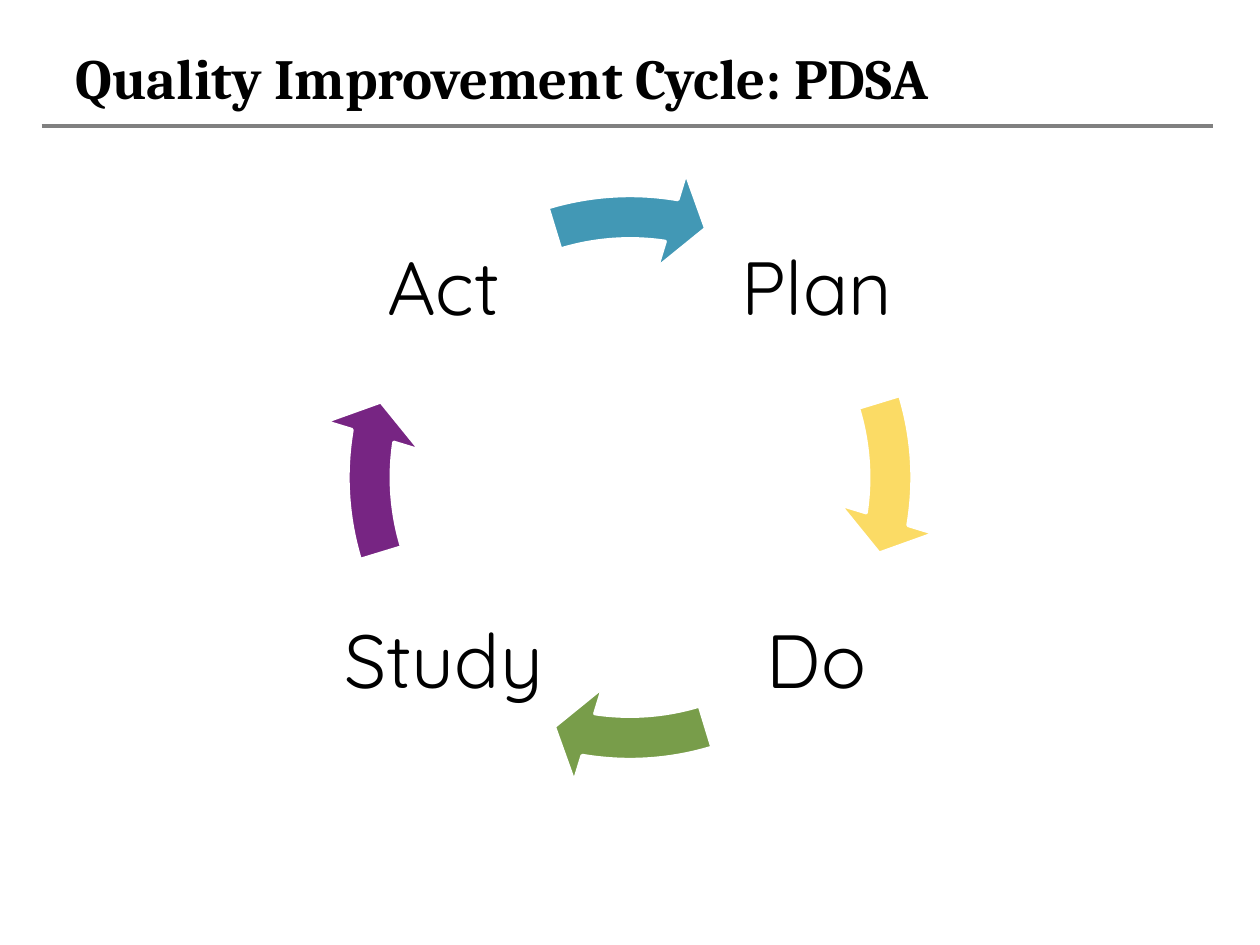
"""Build the PDSA quality improvement cycle slide."""
from typing import NamedTuple

from lxml import etree
from pptx import Presentation
from pptx.dml.color import RGBColor
from pptx.enum.shapes import MSO_CONNECTOR, MSO_SHAPE
from pptx.enum.text import MSO_ANCHOR, PP_ALIGN
from pptx.oxml.ns import qn
from pptx.slide import Slide
from pptx.util import Inches, Pt

ARROW = MSO_SHAPE.CIRCULAR_ARROW
STRAIGHT = MSO_CONNECTOR.STRAIGHT
MIDDLE = MSO_ANCHOR.MIDDLE
LEFT, CENTER = PP_ALIGN.LEFT, PP_ALIGN.CENTER

BLACK = RGBColor(0x00, 0x00, 0x00)
WHITE = RGBColor(0xFF, 0xFF, 0xFF)
GRAY = RGBColor(0x80, 0x80, 0x80)
YELLOW = RGBColor(0xFB, 0xDB, 0x65)
GREEN = RGBColor(0x78, 0x9D, 0x4A)
PURPLE = RGBColor(0x77, 0x25, 0x83)
BLUE = RGBColor(0x42, 0x98, 0xB5)

WEST, EAST, NORTH, SOUTH = 2.65, 5.61, 1.44, 4.4
LABEL, RING = 1.74, 4.92
FULL, QUARTER = 216, 54
TIP, TAIL = 5.5, 205.85


class Step(NamedTuple):
    name: str
    left: float
    top: float
    color: RGBColor


STEPS = [
    Step("Plan", EAST, NORTH, YELLOW),
    Step("Do", EAST, SOUTH, GREEN),
    Step("Study", WEST, SOUTH, PURPLE),
    Step("Act", WEST, NORTH, BLUE),
]


def add_rule(slide: Slide) -> None:
    rule = slide.shapes.add_connector(
        STRAIGHT, Inches(0.33), Inches(1), Inches(9.63), Inches(1))
    rule.line.color.rgb = GRAY
    rule.line.width = Pt(2.25)
    etree.SubElement(rule._element.spPr, qn("a:effectLst"))


def set_title(slide: Slide, text: str) -> None:
    title = slide.shapes.title
    title.left, title.top = Inches(0.5), Inches(0.3)
    title.width, title.height = Inches(9), Inches(0.62)
    frame = title.text_frame
    frame.text = text
    frame.vertical_anchor = MIDDLE
    para = frame.paragraphs[0]
    para.alignment = LEFT
    font = para.runs[0].font
    font.name, font.size, font.bold = "Cambria", Pt(32.4), True
    font.color.rgb = BLACK


def add_label(slide: Slide, step: Step) -> None:
    box = slide.shapes.add_textbox(
        Inches(step.left), Inches(step.top), Inches(LABEL), Inches(LABEL))
    frame = box.text_frame
    frame.text = step.name
    frame.word_wrap = True
    frame.vertical_anchor = MIDDLE
    frame.margin_left = frame.margin_right = Inches(0.06)
    frame.margin_top = frame.margin_bottom = Inches(0.06)
    para = frame.paragraphs[0]
    para.alignment = CENTER
    para.line_spacing = 0.9
    font = para.runs[0].font
    font.name, font.size = "Quicksand", Pt(43)
    font.color.rgb = BLACK


def add_arrow(slide: Slide, step: Step, index: int) -> None:
    arrow = slide.shapes.add_shape(
        ARROW, Inches(2.54), Inches(1.33), Inches(RING), Inches(RING))
    turn = index * QUARTER
    values = (0.07, 4.65, TIP + turn, (TAIL + turn) % FULL, 0.08)
    for spot, value in enumerate(values):
        arrow.adjustments[spot] = value
    arrow.shadow.inherit = False
    arrow.fill.solid()
    arrow.fill.fore_color.rgb = step.color
    arrow.line.color.rgb = WHITE
    arrow.line.width = Pt(2)


def main() -> None:
    deck = Presentation()
    deck.slide_width, deck.slide_height = Inches(10), Inches(7.5)
    slide = deck.slides.add_slide(deck.slide_layouts[5])
    add_rule(slide)
    set_title(slide, "Quality Improvement Cycle: PDSA")
    for index, step in enumerate(STEPS):
        add_label(slide, step)
        add_arrow(slide, step, index)
    deck.save("out.pptx")


if __name__ == "__main__":
    main()
